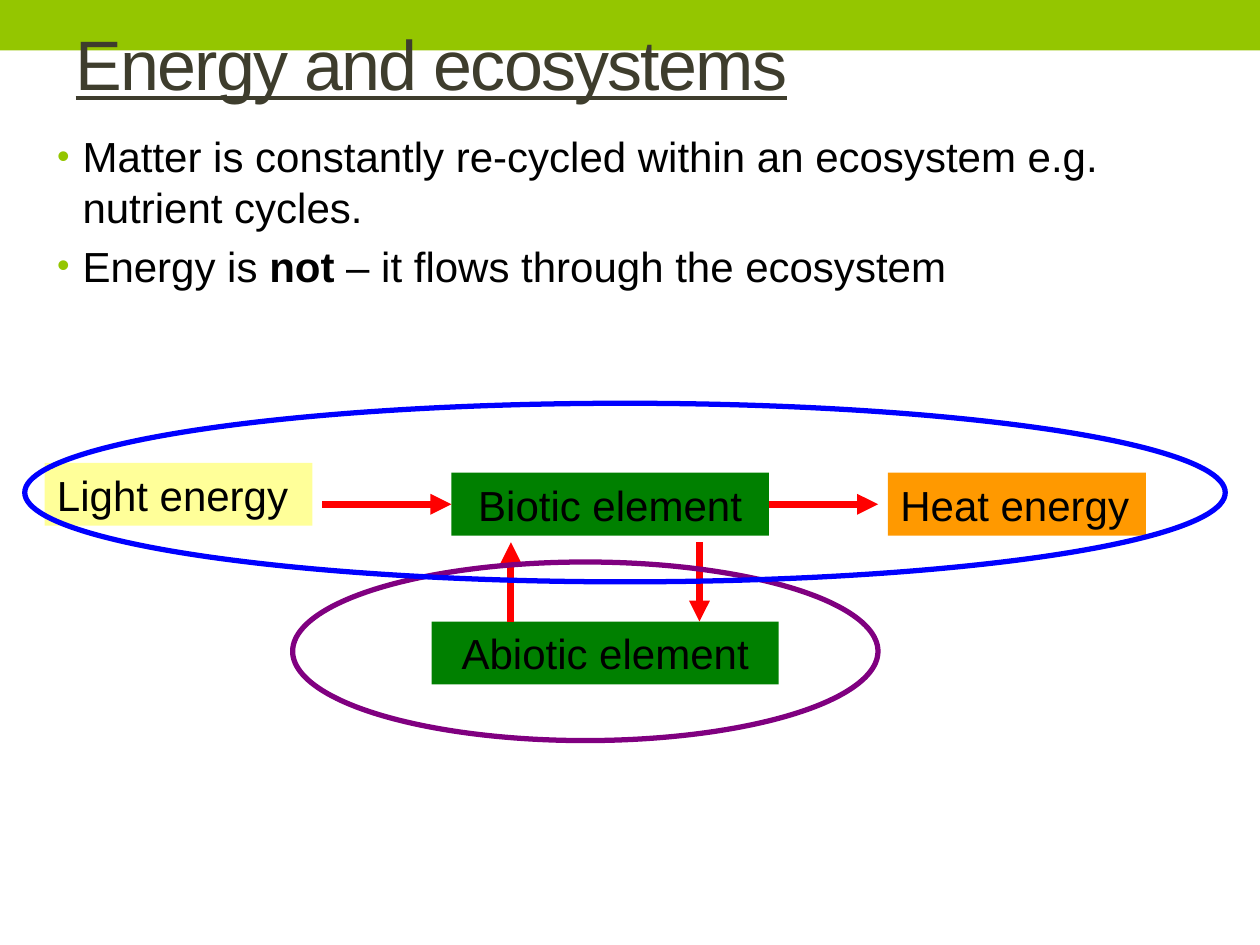
from dataclasses import dataclass

from lxml import etree
from pptx import Presentation
from pptx.dml.color import RGBColor
from pptx.enum.shapes import MSO_CONNECTOR, MSO_SHAPE
from pptx.enum.text import MSO_ANCHOR, PP_ALIGN
from pptx.oxml.ns import qn
from pptx.util import Cm, Pt

RECT, OVAL = MSO_SHAPE.RECTANGLE, MSO_SHAPE.OVAL
STRAIGHT = MSO_CONNECTOR.STRAIGHT
LEFT, CENTER = PP_ALIGN.LEFT, PP_ALIGN.CENTER
TOP, MIDDLE = MSO_ANCHOR.TOP, MSO_ANCHOR.MIDDLE
LEFT_SIDE, RIGHT_SIDE = 1, 3


@dataclass(frozen=True)
class Theme:
    font: str = "Arial"
    title_size: int = 40
    text_size: int = 24
    lime: str = "94C600"
    title: str = "3E3D2D"
    text: str = "000000"
    light: str = "FFFF99"
    green: str = "008000"
    heat: str = "FF9900"
    arrow: str = "FF0000"
    purple: str = "800080"
    blue: str = "0000FF"


THEME = Theme()


def rgb(code):
    return RGBColor.from_string(code)


def add_run(para, text, size=THEME.text_size, color=THEME.text, bold=None):
    run = para.add_run()
    run.text = text
    font = run.font
    font.name, font.size, font.bold = THEME.font, Pt(size), bold
    font.color.rgb = rgb(color)
    return run


def place(shape, box):
    shape.left, shape.top, shape.width, shape.height = map(Cm, box)


def add_form(slide, kind, box, fill=None, line=None):
    shape = slide.shapes.add_shape(kind, *map(Cm, box))
    shape.shadow.inherit = False
    if fill:
        shape.fill.solid()
        shape.fill.fore_color.rgb = rgb(fill)
    else:
        shape.fill.background()
    if line:
        shape.line.color.rgb = rgb(line)
        shape.line.width = Pt(3)
    else:
        shape.line.fill.background()
    return shape


def add_label(slide, box, text, fill, align=LEFT):
    shape = add_form(slide, RECT, box, fill)
    frame = shape.text_frame
    frame.word_wrap = True
    frame.vertical_anchor = MIDDLE
    para = frame.paragraphs[0]
    para.alignment = align
    add_run(para, text)
    return shape


def add_arrow(slide, start, end):
    arrow = slide.shapes.add_connector(STRAIGHT, *map(Cm, start + end))
    arrow.line.color.rgb = rgb(THEME.arrow)
    arrow.line.width = Pt(4)
    etree.SubElement(arrow.line._get_or_add_ln(), qn("a:tailEnd"), type="triangle")
    etree.SubElement(arrow._element.spPr, qn("a:effectLst"))
    return arrow


def add_bullet(para):
    para.space_before = Pt(5)
    props = para._p.get_or_add_pPr()
    props.set("marL", str(Cm(0.51)))
    props.set("indent", str(Cm(-0.51)))
    color = etree.SubElement(props, qn("a:buClr"))
    etree.SubElement(color, qn("a:srgbClr"), val=THEME.lime)
    etree.SubElement(props, qn("a:buSzPct"), val="85000")
    etree.SubElement(props, qn("a:buFont"), typeface=THEME.font)
    etree.SubElement(props, qn("a:buChar"), char="•")


def draw_title(slide, box, text):
    title = slide.shapes.title
    place(title, box)
    title.text_frame.vertical_anchor = MIDDLE
    para = title.text_frame.paragraphs[0]
    para.alignment = LEFT
    run = add_run(para, text, THEME.title_size, THEME.title)
    run.font.underline = True
    run.font._element.set("spc", "-100")


def draw_list(slide, box, items):
    body = slide.placeholders[1]
    place(body, box)
    frame = body.text_frame
    frame.vertical_anchor = TOP
    for index, runs in enumerate(items):
        para = frame.add_paragraph() if index else frame.paragraphs[0]
        add_bullet(para)
        for text, bold in runs:
            add_run(para, text, bold=bold)


def draw_flow(slide, box):
    x, y, width, height = box
    tall = 1.27
    row = y + 1.4           # top of the upper row
    mid = row + tall / 2    # line of the energy flow
    low = y + 4.4           # top of the lower row
    gap = row + tall + 0.13

    # Labels
    add_label(slide, (x + 0.4, row - 0.2, 5.4, tall), "Light energy", THEME.light)
    biotic = add_label(slide, (x + 8.6, row, 6.4, tall), "Biotic element",
                       THEME.green, CENTER)
    add_label(slide, (x + 17.4, row, 5.2, tall), "Heat energy", THEME.heat)
    add_label(slide, (x + 8.2, low, 7, tall), "Abiotic element",
              THEME.green, CENTER)

    # Energy flows across, matter cycles up and down
    inflow = add_arrow(slide, (x + 6, mid), (x + 8.6, mid))
    inflow.end_connect(biotic, LEFT_SIDE)
    outflow = add_arrow(slide, (x + 15, mid), (x + 17.2, mid))
    outflow.begin_connect(biotic, RIGHT_SIDE)
    add_arrow(slide, (x + 13.6, gap), (x + 13.6, low))
    add_arrow(slide, (x + 9.8, low), (x + 9.8, gap))

    # Rings
    ring = 3.6
    add_form(slide, OVAL, (x + 5.4, y + height - ring, 11.8, ring),
             line=THEME.purple)
    add_form(slide, OVAL, (x, y, width, ring), line=THEME.blue)


def main():
    deck = Presentation()
    deck.slide_width, deck.slide_height = Cm(25.4), Cm(19.05)
    slide = deck.slides.add_slide(deck.slide_layouts[1])

    # Top band, behind the title
    band = add_form(slide, RECT, (0, 0, 25.4, 1.02), THEME.lime)
    slide.shapes._spTree.insert(2, band._element)

    draw_title(slide, (1.27, 0, 22.86, 2.51), "Energy and ecosystems")
    draw_list(slide, (0.9, 2.51, 23.24, 5.2), [
        [("Matter is constantly re-cycled within an ecosystem e.g. "
          "nutrient cycles.", None)],
        [("Energy is ", None), ("not", True),
         (" – it flows through the ecosystem", False)],
    ])
    draw_flow(slide, (0.5, 8.13, 24.2, 6.8))
    deck.save("out.pptx")


if __name__ == "__main__":
    main()
